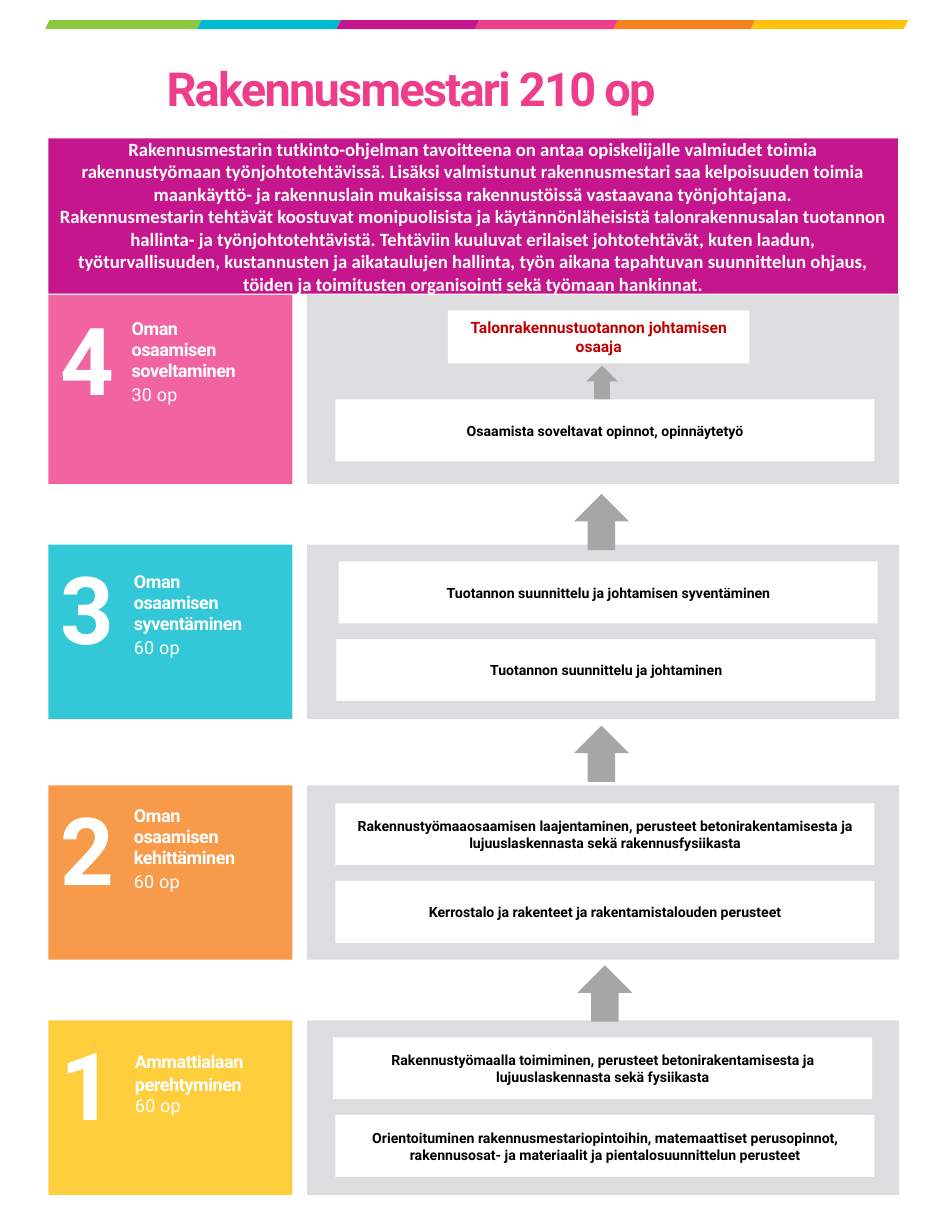
from dataclasses import dataclass
from itertools import pairwise

from lxml import etree
from pptx import Presentation
from pptx.dml.color import RGBColor
from pptx.enum.shapes import MSO_SHAPE
from pptx.enum.text import MSO_ANCHOR, MSO_AUTO_SIZE, PP_ALIGN
from pptx.oxml.ns import qn
from pptx.util import Inches, Pt

RECTANGLE, UP_ARROW = MSO_SHAPE.RECTANGLE, MSO_SHAPE.UP_ARROW
LEFT, CENTER = PP_ALIGN.LEFT, PP_ALIGN.CENTER
TOP, MIDDLE = MSO_ANCHOR.TOP, MSO_ANCHOR.MIDDLE
FIXED_SIZE = MSO_AUTO_SIZE.NONE


@dataclass(frozen=True)
class Theme:
    font: str = "Roboto"
    intro_font: str = "Calibri"
    white: str = "FFFFFF"
    black: str = "000000"
    panel: str = "DDDDDF"
    arrow: str = "A6A6A6"
    goal: str = "C00000"
    green: str = "8DC63F"
    cyan: str = "00BBCE"
    purple: str = "C6168D"
    pink: str = "EE3D8A"
    orange: str = "F5821F"
    yellow: str = "FFC20D"
    title_size: float = 30
    digit_size: float = 60
    intro_size: float = 12
    heading_size: float = 11.5
    goal_size: float = 10
    course_size: float = 9


@dataclass(frozen=True)
class Level:
    digit: str
    color: str
    top: float
    height: float
    heading: str
    credits: str
    heading_at: tuple
    line_height: float
    credits_gap: float
    course_top: float
    courses: tuple


THEME = Theme()
COURSE_STEP = 0.69

INTRO = (
    "Rakennusmestarin tutkinto-ohjelman tavoitteena on antaa opiskelijalle valmiudet toimia "
    "rakennustyömaan työnjohtotehtävissä. Lisäksi valmistunut rakennusmestari saa kelpoisuuden toimia "
    "maankäyttö- ja rakennuslain mukaisissa rakennustöissä vastaavana työnjohtajana.",
    "Rakennusmestarin tehtävät koostuvat monipuolisista ja käytännönläheisistä talonrakennusalan tuotannon "
    "hallinta- ja työnjohtotehtävistä. Tehtäviin kuuluvat erilaiset johtotehtävät, kuten laadun, "
    "työturvallisuuden, kustannusten ja aikataulujen hallinta, työn aikana tapahtuvan suunnittelun ohjaus, "
    "töiden ja toimitusten organisointi sekä työmaan hankinnat.",
)

LEVELS = (
    Level("4", THEME.pink, 2.62, 1.68, "Oman osaamisen soveltaminen", "30 op", (0.74, 0.21), 13.4, 1.8, 0.93, (
        (0.25, "Osaamista soveltavat opinnot, opinnäytetyö"),
    )),
    Level("3", THEME.cyan, 4.84, 1.55, "Oman osaamisen syventäminen", "60 op", (0.76, 0.24), 13.4, 1.8, 0.15, (
        (0.28, "Tuotannon suunnittelu ja johtamisen syventäminen"),
        (0.26, "Tuotannon suunnittelu ja johtaminen"),
    )),
    Level("2", THEME.orange, 6.98, 1.55, "Oman osaamisen kehittäminen", "60 op", (0.76, 0.18), 13.4, 1.8, 0.16, (
        (0.25, "Rakennustyömaaosaamisen laajentaminen, perusteet betonirakentamisesta ja "
               "lujuuslaskennasta sekä rakennusfysiikasta"),
        (0.25, "Kerrostalo ja rakenteet ja rakentamistalouden perusteet"),
    )),
    Level("1", THEME.yellow, 9.07, 1.55, "Ammattialaan perehtyminen", "60 op", (0.77, 0.26), 14.4, 0, 0.15, (
        (0.23, "Rakennustyömaalla toimiminen, perusteet betonirakentamisesta ja "
               "lujuuslaskennasta sekä fysiikasta"),
        (0.25, "Orientoituminen rakennusmestariopintoihin, matemaattiset perusopinnot, "
               "rakennusosat- ja materiaalit ja pientalosuunnittelun perusteet"),
    )),
)


def paint(shape, color, opacity=100):
    shape.shadow.inherit = False
    shape.fill.solid()
    shape.fill.fore_color.rgb = RGBColor.from_string(color)
    shape.line.fill.background()
    if opacity < 100:
        tint = shape.fill._xPr.find(f".//{qn('a:srgbClr')}")
        etree.SubElement(tint, qn("a:alpha")).set("val", str(opacity * 1000))


def add_block(page, preset, left, top, width, height, color, opacity=100):
    block = page.shapes.add_shape(preset, Inches(left), Inches(top), Inches(width), Inches(height))
    paint(block, color, opacity)
    return block


def style(para, size, color, bold=True, font=THEME.font, align=LEFT):
    para.alignment = align
    para.font.name = font
    para.font.size = Pt(size)
    para.font.bold = bold
    para.font.color.rgb = RGBColor.from_string(color)


def track(para, points):
    for span in para.runs:
        span._r.get_or_add_rPr().set("spc", str(round(points * 100)))


def clear_margins(frame):
    frame.margin_left = frame.margin_right = frame.margin_top = frame.margin_bottom = 0
    frame.word_wrap = True
    frame.auto_size = FIXED_SIZE
    frame.vertical_anchor = TOP


def write_lines(frame, lines):
    frame.text = "\n".join(lines)
    return frame.paragraphs


def add_label(page, left, top, width, height, lines):
    box = page.shapes.add_textbox(Inches(left), Inches(top), Inches(width), Inches(height))
    clear_margins(box.text_frame)
    return write_lines(box.text_frame, lines)


def add_card(page, left, top, width, height, lines, size, color, fill=THEME.white, font=THEME.font):
    card = add_block(page, RECTANGLE, left, top, width, height, fill)
    card.text_frame.word_wrap = True
    card.text_frame.vertical_anchor = MIDDLE
    for para in write_lines(card.text_frame, lines):
        style(para, size, color, font=font, align=CENTER)


def add_title(page, left, top, width, height):
    title = page.shapes.title
    title.left, title.top, title.width, title.height = map(Inches, (left, top, width, height))
    clear_margins(title.text_frame)
    para = write_lines(title.text_frame, ["Rakennusmestari 210 op"])[0]
    style(para, THEME.title_size, THEME.pink)
    track(para, -1.1)


def add_color_strip(page, top, height, slant):
    edges = (0.44, 1.79, 3.03, 4.26, 5.49, 6.71, 8.07)
    colors = (THEME.green, THEME.cyan, THEME.purple, THEME.pink, THEME.orange, THEME.yellow)
    bottom = top + height
    for (start, end), color in zip(pairwise(edges), colors):
        outline = page.shapes.build_freeform(Inches(start), Inches(top))
        corners = ((end, top), (end - slant, bottom), (start - slant, bottom))
        outline.add_line_segments([(Inches(x), Inches(y)) for x, y in corners])
        paint(outline.convert_to_shape(), color)


def add_level_badge(page, level, left, width):
    add_block(page, RECTANGLE, left, level.top, width, level.height, level.color, opacity=80)
    digit = add_label(page, left + 0.11, level.top + 0.08, 0.49, 0.98, [level.digit])[0]
    style(digit, THEME.digit_size, THEME.white)
    digit.line_spacing = Pt(70.4)
    track(digit, -2.2)

    across, down = level.heading_at
    heading, credits = add_label(page, left + across, level.top + down, 1.1, 0.77, [level.heading, level.credits])
    style(heading, THEME.heading_size, THEME.white)
    heading.line_spacing = Pt(level.line_height)
    track(heading, -0.28)
    style(credits, THEME.heading_size, THEME.white, bold=False)
    credits.line_spacing = Pt(13.5)
    credits.space_before = Pt(level.credits_gap)
    track(credits, 0.1)


def add_level_courses(page, level, left, width):
    add_block(page, RECTANGLE, left, level.top, width, level.height, THEME.panel)
    if level is LEVELS[0]:
        add_card(page, left + 1.25, level.top + 0.14, 2.68, 0.47,
                 ["Talonrakennustuotannon johtamisen osaaja"], THEME.goal_size, THEME.goal)
        add_block(page, UP_ARROW, left + 2.48, level.top + 0.63, 0.28, 0.37, THEME.arrow)
    for row, (across, name) in enumerate(level.courses):
        top = level.top + level.course_top + row * COURSE_STEP
        add_card(page, left + across, top, 4.79, 0.55, [name], THEME.course_size, THEME.black)


def main():
    deck = Presentation()
    deck.slide_width, deck.slide_height = Inches(8.46), Inches(10.95)
    page = deck.slides.add_slide(deck.slide_layouts[5])
    add_title(page, 1.48, 0.53, 6.17, 0.5)
    add_color_strip(page, 0.18, 0.08, 0.04)
    add_card(page, 0.43, 1.23, 7.55, 1.38, INTRO, THEME.intro_size, THEME.white, THEME.purple, THEME.intro_font)
    for level in LEVELS:
        add_level_badge(page, level, 0.43, 2.17)
        add_level_courses(page, level, 2.73, 5.26)
    for left, top in ((5.1, 4.39), (5.1, 6.45), (5.13, 8.58)):
        add_block(page, UP_ARROW, left, top, 0.49, 0.5, THEME.arrow)
    deck.save("out.pptx")


if __name__ == "__main__":
    main()
